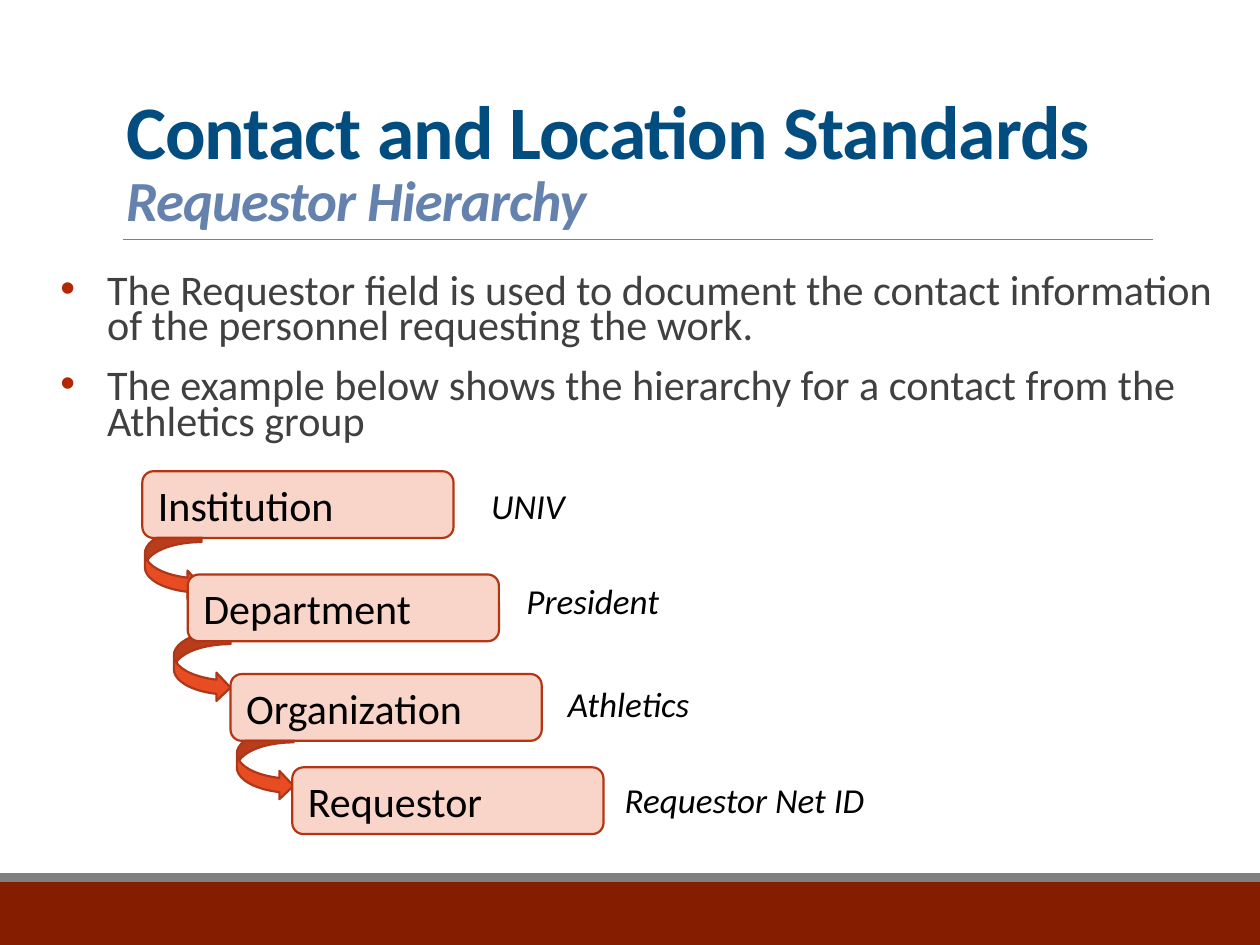
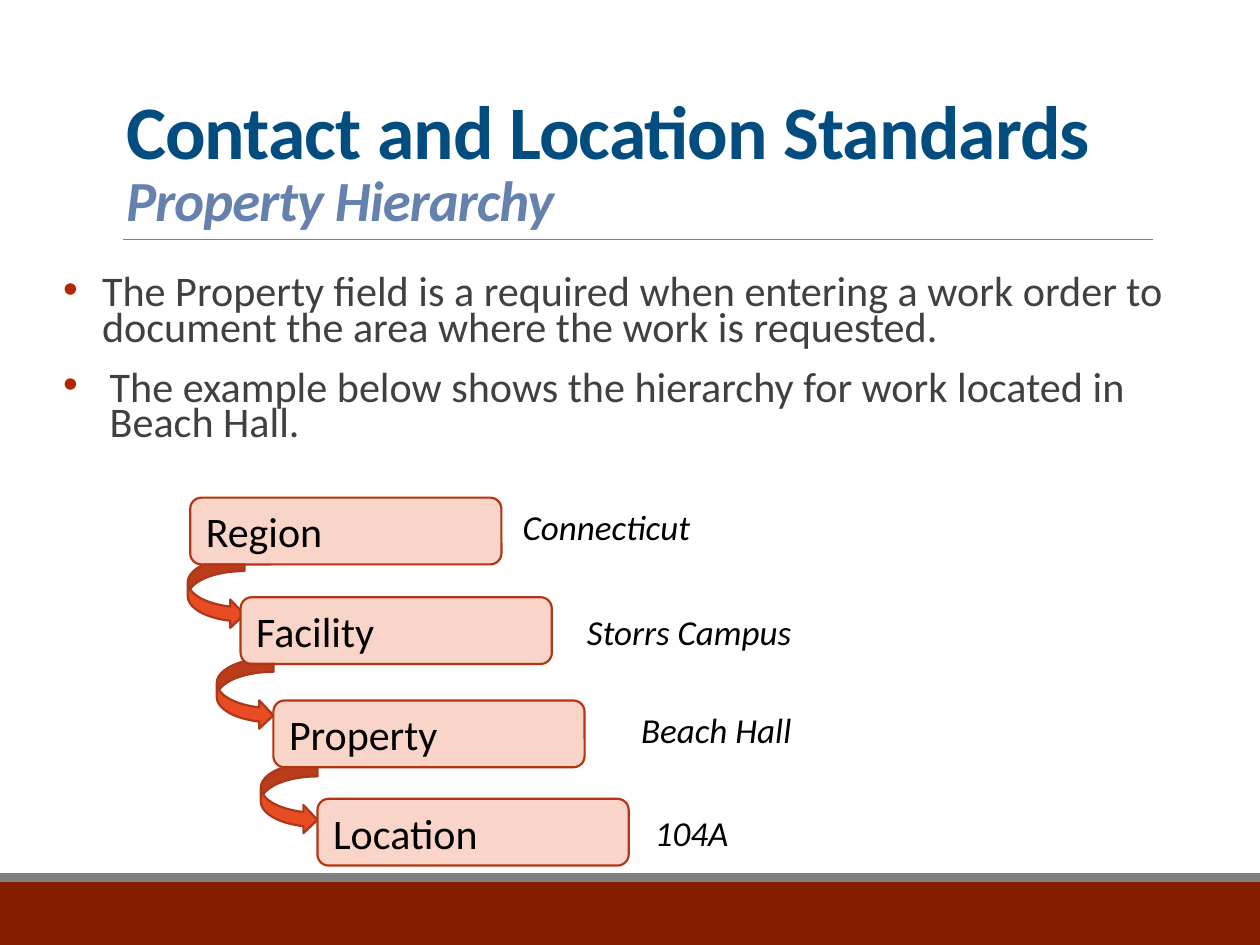
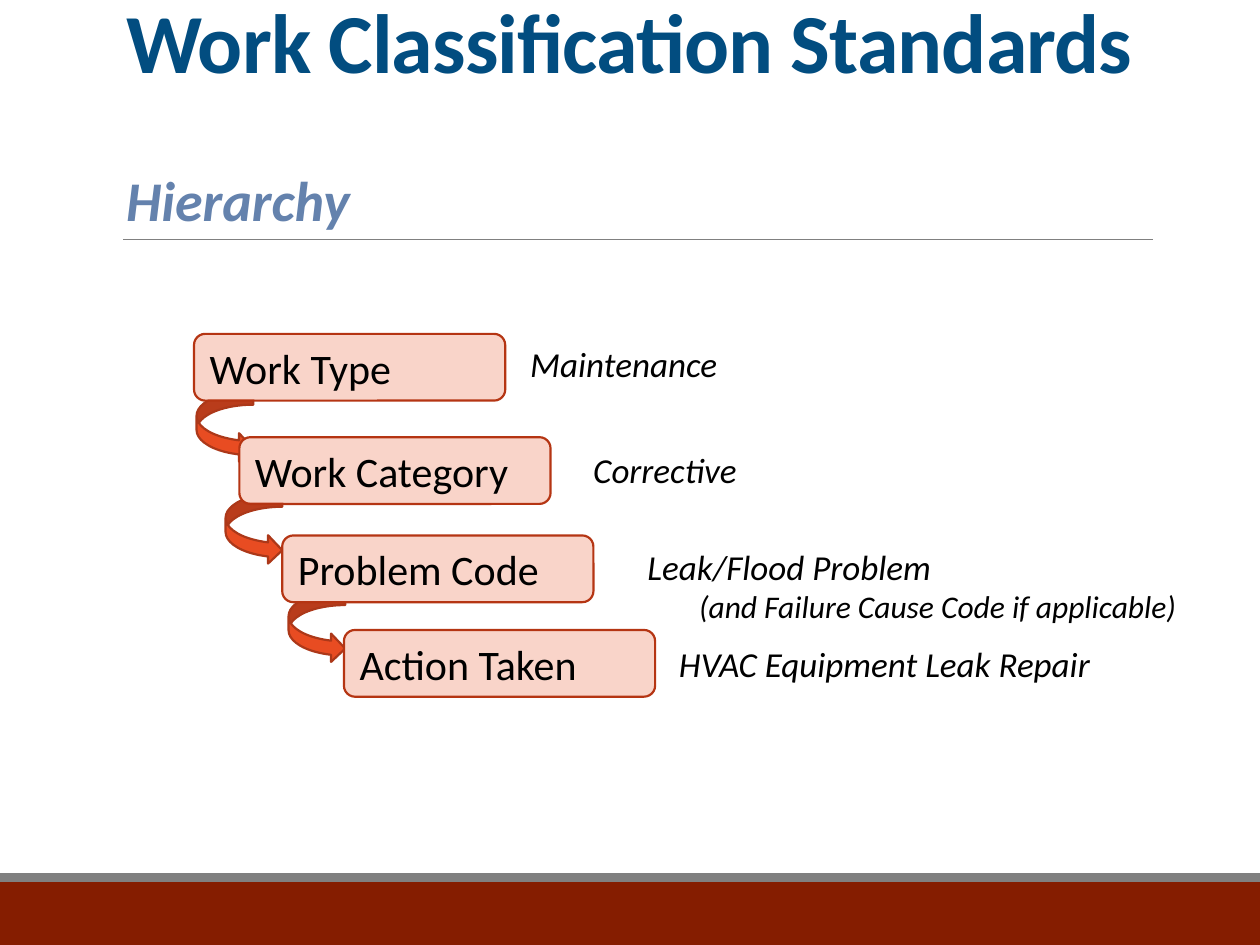
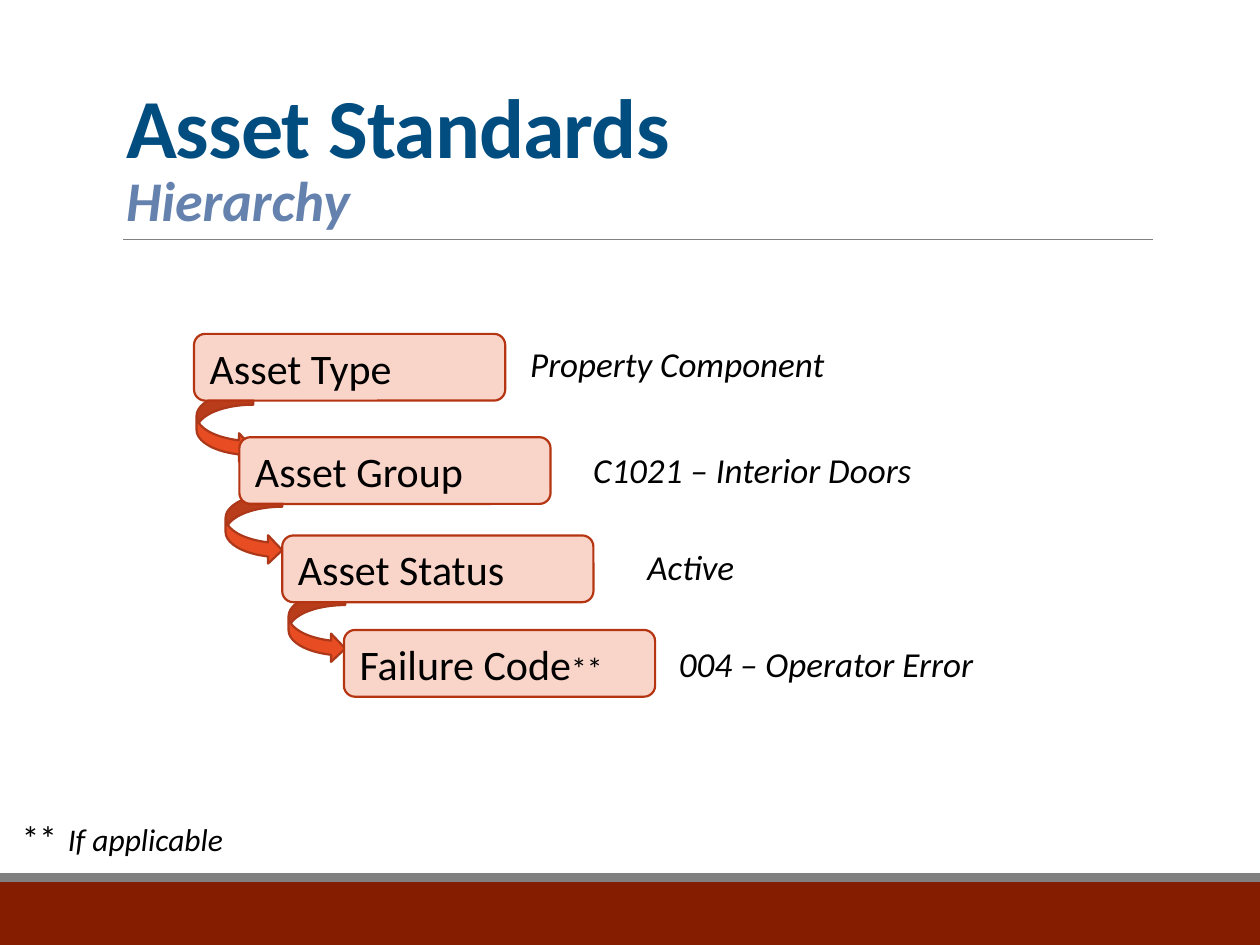
from copy import deepcopy

from lxml.etree import SubElement
from pptx import Presentation
from pptx.dml.color import RGBColor
from pptx.enum.shapes import MSO_CONNECTOR, MSO_SHAPE
from pptx.enum.text import MSO_ANCHOR, MSO_AUTO_SIZE, PP_ALIGN
from pptx.oxml.ns import qn
from pptx.util import Inches, Pt

# Shared formats
BLACK = {"name": "Calibri", "color": "000000"}
BOX_TEXT = {**BLACK, "size": 24}
EXAMPLE = {**BLACK, "size": 20, "italic": True}
NOTE = {**EXAMPLE, "size": 18}
TITLE = {"name": "Calibri", "bold": True, "color": "024D80"}
SUBTITLE = {**TITLE, "italic": True, "color": "6482AD"}
BODY = {"name": "Calibri", "size": 24.1, "color": "404040"}
BOX_W, BOX_H = 2.47, 0.53


def add_run(p, text, fmt, spacing=None):
    r = p.add_run()
    r.text = text
    for key, value in fmt.items():
        if key == "color":
            r.font.color.rgb = RGBColor.from_string(value)
        else:
            setattr(r.font, key, Pt(value) if key == "size" else value)
    if spacing is not None:
        r.font._element.set("spc", str(spacing))
    return r


def add_box(s, kind, at, fill=None, line=None, width=1.25):
    sp = s.shapes.add_shape(kind, *map(Inches, at))
    sp.shadow.inherit = False
    if fill:
        sp.fill.solid()
        sp.fill.fore_color.rgb = RGBColor.from_string(fill)
    else:
        sp.fill.background()
    if line:
        sp.line.color.rgb = RGBColor.from_string(line)
        sp.line.width = Pt(width)
    else:
        sp.line.fill.background()
    sp.text_frame.vertical_anchor = MSO_ANCHOR.MIDDLE
    sp.text_frame.paragraphs[0].alignment = PP_ALIGN.LEFT
    return sp


# Content: each level is (box left, box top, name, example, left, top, width)
slides = [
    {
        "title": "Contact and Location Standards", "subtitle": "Requestor Hierarchy",
        "sizes": (43.2, 32.4), "spacing": -50,
        "body_at": (0.48, 2.15, 9.19, 1.56),
        "bullets": [
            ("The Requestor field is used to document the contact information "
             "of the personnel requesting the work.", 0.37),
            ("The example below shows the hierarchy for a contact from the Athletics group", 0.37),
        ],
        "arrows": [(1.88, 5.78), (1.38, 5), (1.15, 4.19)],
        "levels": [
            (1.13, 3.74, "Institution", "UNIV", 3.8, 3.8, 3.57),
            (1.49, 4.56, "Department", "President", 4.08, 4.55, 3.29),
            (1.83, 5.35, "Organization", "Athletics", 4.41, 5.37, 2.86),
            (2.32, 6.09, "Requestor", "Requestor Net ID", 4.86, 6.13, 3.68),
        ],
    },
    {
        "title": "Contact and Location Standards", "subtitle": "Property Hierarchy",
        "sizes": (43.2, 32.4), "spacing": -50,
        "body_at": (0.5, 2.16, 9.19, 1.56),
        "bullets": [
            ("The Property field is a required when entering a work order to "
             "document the area where the work is requested.", 0.31),
            ("The example below shows the hierarchy for work located in Beach Hall.", 0.37),
        ],
        "arrows": [(2.07, 6.05), (1.72, 5.22), (1.49, 4.42)],
        "levels": [
            (1.51, 3.95, "Region", "Connecticut", 4.05, 3.96, 3.57),
            (1.91, 4.74, "Facility", "Storrs Campus", 4.56, 4.8, 3.29),
            (2.17, 5.56, "Property", "Beach Hall", 4.99, 5.57, 2.86),
            (2.52, 6.34, "Location", "104A", 5.1, 6.39, 2.86),
        ],
    },
]

# The last two slides share one staircase
stairs = [(1.54, 2.65, 4.11, 2.67, 3.57), (1.9, 3.47, 4.61, 3.51, 3.29),
          (2.24, 4.25, 5.04, 4.28, 2.86), (2.73, 5, 5.29, 5.05, 3.68)]
for title, pairs in [
    ("Work Classification Standards ",
     [("Work Type", "Maintenance"), ("Work Category", "Corrective"),
      ("Problem Code", "Leak/Flood Problem"),
      ("Action Taken", "HVAC Equipment Leak Repair")]),
    ("Asset Standards ",
     [("Asset Type", "Property Component"), ("Asset Group", "C1021 – Interior Doors"),
      ("Asset Status", "Active"), ("Failure Code", "004 – Operator Error")]),
]:
    slides.append({
        "title": title, "subtitle": "Hierarchy", "sizes": (48, 32), "spacing": 0,
        "arrows": [(2.29, 4.69), (1.79, 3.91), (1.56, 3.1)],
        "levels": [step[:2] + pair + step[2:] for step, pair in zip(stairs, pairs)],
    })

prs = Presentation()
prs.slide_width, prs.slide_height = Inches(10), Inches(7.5)

for number, data in enumerate(slides, 1):
    s = prs.slides.add_slide(prs.slide_layouts[1 if "bullets" in data else 5])

    # Rule and bottom bands, moved to the master once
    if number == 1:
        rule = s.shapes.add_connector(MSO_CONNECTOR.STRAIGHT, Inches(0.98), Inches(1.9),
                                      Inches(9.15), Inches(1.9))
        rule.line.color.rgb = RGBColor.from_string("808080")
        rule.line.width = Pt(0.5)
        SubElement(rule._element.spPr, qn("a:effectLst"))
        band = add_box(s, MSO_SHAPE.RECTANGLE, (0, 7, 10, 0.5), "851D00")
        stripe = add_box(s, MSO_SHAPE.RECTANGLE, (0, 6.93, 10, 0.07), "808080")
        for i, sp in enumerate((rule, band, stripe)):
            sp._element.xpath(".//p:cNvPr")[0].set("id", str(101 + i))
            prs.slide_master.shapes._spTree.insert(2 + i, sp._element)

    # Title and subtitle
    sp = s.shapes.title
    sp.left, sp.top, sp.width, sp.height = map(Inches, (0.9, 0.31, 8.25, 1.59))
    tf = sp.text_frame
    tf.auto_size = MSO_AUTO_SIZE.NONE
    tf.vertical_anchor = MSO_ANCHOR.BOTTOM
    p = tf.paragraphs[0]
    p.alignment = PP_ALIGN.LEFT
    p.line_spacing = 0.85
    title_size, subtitle_size = data["sizes"]
    r = add_run(p, data["title"], {**TITLE, "size": title_size}, -50)
    p.add_line_break()
    p._p.find(qn("a:br")).insert(0, deepcopy(r.font._element))
    add_run(p, data["subtitle"], {**SUBTITLE, "size": subtitle_size}, data["spacing"])

    # Bullets
    if "bullets" in data:
        sp = s.placeholders[1]
        sp.left, sp.top, sp.width, sp.height = map(Inches, data["body_at"])
        tf = sp.text_frame
        tf.auto_size = MSO_AUTO_SIZE.NONE
        tf.margin_left = tf.margin_right = 0
        for i, (text, indent) in enumerate(data["bullets"]):
            p = tf.add_paragraph() if i else tf.paragraphs[0]
            p.line_spacing, p.space_before, p.space_after = 0.7, Pt(12), Pt(2)
            pPr = p._p.get_or_add_pPr()
            pPr.set("marL", str(Inches(indent)))
            pPr.set("indent", str(-Inches(indent)))
            SubElement(SubElement(pPr, qn("a:buClr")), qn("a:srgbClr"), val="B22600")
            SubElement(pPr, qn("a:buFont"), typeface="Arial")
            SubElement(pPr, qn("a:buChar"), char="•")
            add_run(p, text, BODY)

    # Arrows, then white backings, then tinted boxes
    for x, y in data["arrows"]:
        add_box(s, MSO_SHAPE.CURVED_RIGHT_ARROW, (x, y, 0.45, 0.57), "E84C22", "AC3819")
    for x, y, *_ in data["levels"]:
        add_box(s, MSO_SHAPE.ROUNDED_RECTANGLE, (x, y + 0.01, BOX_W, 0.51), "FFFFFF")
    for x, y, name, example, left, top, width in data["levels"]:
        sp = add_box(s, MSO_SHAPE.ROUNDED_RECTANGLE, (x, y, BOX_W, BOX_H), "F1947A", "B53513")
        color = sp._element.spPr.find(qn("a:solidFill")).find(qn("a:srgbClr"))
        SubElement(color, qn("a:alpha"), val="40000")
        p = sp.text_frame.paragraphs[0]
        add_run(p, name, BOX_TEXT)
        if name == "Failure Code":
            add_run(p, "**", {**BOX_TEXT, "size": 18})

        # Example beside the box
        tf = s.shapes.add_textbox(*map(Inches, (left, top, width, 0.44))).text_frame
        tf.word_wrap = True
        tf.auto_size = MSO_AUTO_SIZE.SHAPE_TO_FIT_TEXT
        add_run(tf.paragraphs[0], example, EXAMPLE)

    # Remarks on the last two slides
    if number == 3:
        tf = s.shapes.add_textbox(*map(Inches, (5.45, 4.61, 4.03, 0.4))).text_frame
        tf.word_wrap = False
        tf.auto_size = MSO_AUTO_SIZE.SHAPE_TO_FIT_TEXT
        add_run(tf.paragraphs[0], "(and Failure Cause Code if applicable)", NOTE)
    elif number == 4:
        sp = add_box(s, MSO_SHAPE.ROUNDED_RECTANGLE, (0.05, 6.34, BOX_W, BOX_H))
        p = sp.text_frame.paragraphs[0]
        add_run(p, "**", {**BLACK, "size": 20})
        add_run(p, " ", {**BLACK, "size": 28})
        add_run(p, "If applicable", NOTE)

prs.save("out.pptx")
